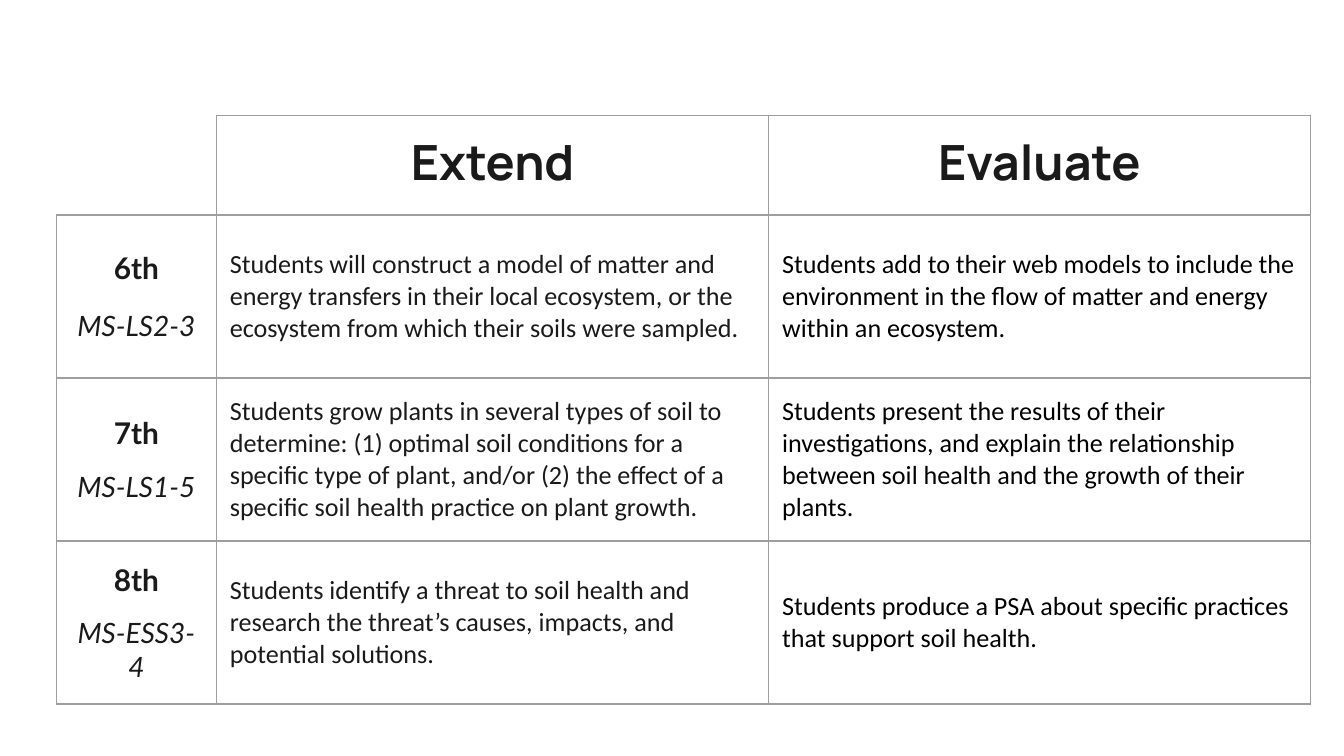
from dataclasses import dataclass

from lxml import etree
from pptx import Presentation
from pptx.dml.color import RGBColor
from pptx.enum import text as t
from pptx.oxml import ns
from pptx.util import Inches, Pt

INK = RGBColor(0x1A, 0x1A, 0x1A)
BLACK = RGBColor(0, 0, 0)
BORDER = RGBColor(0x9E, 0x9E, 0x9E)

PAGE_WIDTH = 10
PAGE_HEIGHT = PAGE_WIDTH * 9 / 16
COLUMN_WIDTHS = (1.19, 4.11, 4.03)
TABLE_HEIGHT, HEADER_HEIGHT = 4.38, 0.74
HEADINGS = ("Extend", "Evaluate")
SIDES = ("L", "R", "T", "B")


@dataclass(frozen=True)
class Grade:
    name: str
    standard: str
    extend: str
    evaluate: str
    spacing: float = 1.0


GRADES = (
    Grade(
        "6th", "MS-LS2-3",
        "Students will construct a model of matter and energy transfers in their "
        "local ecosystem, or the ecosystem from which their soils were sampled.",
        "Students add to their web models to include the environment in the flow "
        "of matter and energy within an ecosystem.",
        spacing=1.15,
    ),
    Grade(
        "7th", "MS-LS1-5",
        "Students grow plants in several types of soil to determine: (1) optimal "
        "soil conditions for a specific type of plant, and/or (2) the effect of a "
        "specific soil health practice on plant growth.",
        "Students present the results of their investigations, and explain the "
        "relationship between soil health and the growth of their plants.",
    ),
    Grade(
        "8th", "MS-ESS3-4",
        "Students identify a threat to soil health and research the threat’s "
        "causes, impacts, and potential solutions.",
        "Students produce a PSA about specific practices that support soil health.",
    ),
)


def style_cell(cell, sides: tuple[str, ...] = SIDES) -> None:
    """Clear the fill, set the margins and rule only the given sides."""
    properties = cell._tc.get_or_add_tcPr()
    for side in SIDES:
        line = etree.SubElement(properties, ns.qn(f"a:ln{side}"), w=str(Pt(0.75)))
        if side in sides:
            fill = etree.SubElement(line, ns.qn("a:solidFill"))
            etree.SubElement(fill, ns.qn("a:srgbClr"), val=str(BORDER))
        else:
            etree.SubElement(line, ns.qn("a:noFill"))
    cell.fill.background()
    cell.margin_left = cell.margin_right = Inches(0.1)
    cell.margin_top = cell.margin_bottom = Inches(0.1)


def write(para, content: str, *, font: str, size: float, color: RGBColor = INK,
          bold: bool = False, italic: bool = False, centered: bool = False) -> None:
    para.alignment = t.PP_ALIGN.CENTER if centered else t.PP_ALIGN.LEFT
    span = para.add_run()
    span.text = content
    span.font.name = font
    span.font.size = Pt(size)
    span.font.bold = bold
    span.font.italic = italic
    span.font.color.rgb = color


def fill_header(table) -> None:
    style_cell(table.cell(0, 0), sides=("R", "B"))
    for column, heading in enumerate(HEADINGS, start=1):
        cell = table.cell(0, column)
        style_cell(cell)
        write(cell.text_frame.paragraphs[0], heading, font="Manrope", size=26,
              bold=True, centered=True)


def fill_grade(table, row: int, grade: Grade) -> None:
    label, extend, evaluate = (table.cell(row, column) for column in range(3))
    for cell in (label, extend, evaluate):
        style_cell(cell)
        cell.vertical_anchor = t.MSO_ANCHOR.MIDDLE
    write(label.text_frame.paragraphs[0], grade.name, font="Lato", size=16,
          bold=True, centered=True)
    standard = label.text_frame.add_paragraph()
    standard.space_before = Pt(10)
    standard.line_spacing = grade.spacing
    write(standard, grade.standard, font="Lato", size=15, italic=True, centered=True)
    write(extend.text_frame.paragraphs[0], grade.extend, font="Calibri", size=14)
    write(evaluate.text_frame.paragraphs[0], grade.evaluate, font="Calibri", size=14,
          color=BLACK)


def main() -> None:
    deck = Presentation()
    deck.slide_width, deck.slide_height = Inches(PAGE_WIDTH), Inches(PAGE_HEIGHT)
    page = deck.slides.add_slide(deck.slide_layouts[6])
    grade_height = (TABLE_HEIGHT - HEADER_HEIGHT) / len(GRADES)
    heights = (HEADER_HEIGHT, *[grade_height] * len(GRADES))
    table = page.shapes.add_table(
        len(heights), len(COLUMN_WIDTHS), Inches(0.42), Inches(0.86),
        Inches(sum(COLUMN_WIDTHS)), Inches(TABLE_HEIGHT)).table
    table.first_row = table.horz_banding = False
    for column, width in zip(table.columns, COLUMN_WIDTHS):
        column.width = Inches(width)
    for row, height in zip(table.rows, heights):
        row.height = Inches(height)
    fill_header(table)
    for row, grade in enumerate(GRADES, start=1):
        fill_grade(table, row, grade)
    deck.save("out.pptx")


if __name__ == "__main__":
    main()
